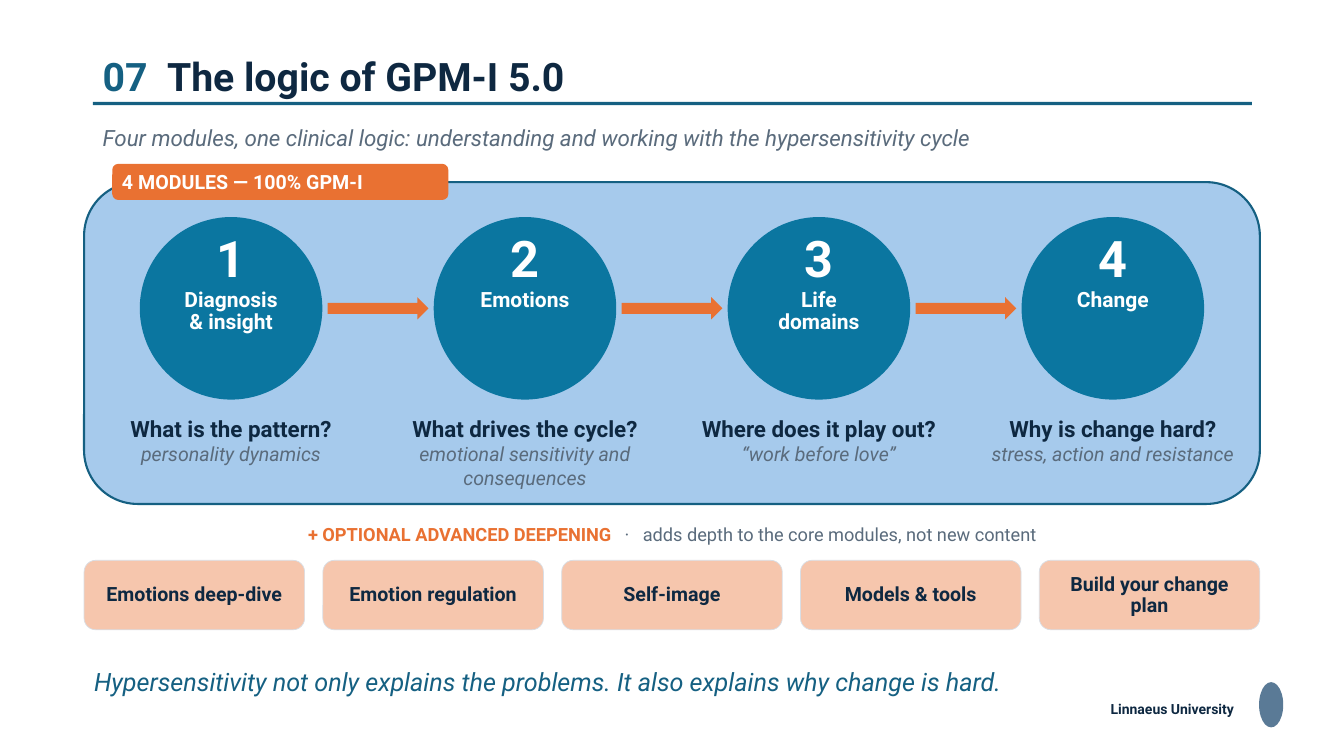
from pptx import Presentation
from pptx.dml.color import RGBColor
from pptx.enum.shapes import MSO_SHAPE as Shape
from pptx.enum.text import MSO_ANCHOR as Anchor, PP_ALIGN as Align
from pptx.util import Cm, Pt

FONT = "Roboto"
NAVY, TEAL, GREY, ORANGE = "0E2841", "156082", "5A6B7C", "E97132"
BLUE, PALE_BLUE, PEACH, WHITE = "0B76A0", "A6CAEC", "F6C6AD", "FFFFFF"
SLATE, SILVER = "5A7A96", "D9DEE5"

MODULES = [
    ("Diagnosis & insight", "What is the pattern?", "personality dynamics"),
    ("Emotions", "What drives the cycle?", "emotional sensitivity and consequences"),
    ("Life domains", "Where does it play out?", "“work before love”"),
    ("Change", "Why is change hard?", "stress, action and resistance"),
]
DEEPENING = ["Emotions deep-dive", "Emotion regulation", "Self-image",
             "Models & tools", "Build your change plan"]


def color(value):
    return RGBColor.from_string(value)


def span(text, size, tone, gap=0, **style):
    """One stretch of text; gap is extra letter spacing in points."""
    return text, tone, gap, dict(name=FONT, size=Pt(size), **style)


def write(box, paragraphs, anchor=Anchor.TOP, side=0.25):
    """Fill a box with paragraphs, each a list of spans and a format dict."""
    frame = box.text_frame
    settings = dict(word_wrap=True, vertical_anchor=anchor,
                    margin_left=Cm(side), margin_right=Cm(side))
    for name, value in settings.items():
        setattr(frame, name, value)
    for index, (spans, layout) in enumerate(paragraphs):
        para = frame.add_paragraph() if index else frame.paragraphs[0]
        for name, value in layout.items():
            setattr(para, name, value)
        for text, tone, gap, style in spans:
            run = para.add_run()
            run.text = text
            for name, value in style.items():
                setattr(run.font, name, value)
            run.font.color.rgb = color(tone)
            if gap:
                run.font._element.set("spc", str(round(gap * 100)))


def add_text(page, left, top, width, height, paragraphs, **options):
    box = page.shapes.add_textbox(Cm(left), Cm(top), Cm(width), Cm(height))
    write(box, paragraphs, **options)


def add_block(page, kind, left, top, width, height, fill, line=None, weight=1):
    block = page.shapes.add_shape(kind, Cm(left), Cm(top), Cm(width), Cm(height))
    block.shadow.inherit = False
    block.fill.solid()
    block.fill.fore_color.rgb = color(fill)
    if line:
        block.line.color.rgb = color(line)
        block.line.width = Pt(weight)
    else:
        block.line.fill.background()
    return block


def add_header(page, left, top, width):
    title = [span("07", 28, TEAL, bold=True), span(" ", 28, TEAL, 6.9, bold=True),
             span("The logic of GPM-I 5.0", 28, NAVY, bold=True)]
    add_text(page, left, top, width, 1.27, [(title, {})], anchor=Anchor.MIDDLE)
    add_block(page, Shape.RECTANGLE, left, top + 1.3, width, 0.08, TEAL)
    subtitle = ("Four modules, one clinical logic: understanding and working "
                "with the hypersensitivity cycle")
    add_text(page, left, top + 1.73, width, 0.79,
             [([span(subtitle, 16, GREY, italic=True)], {})])


def add_modules(page, left, top, width, height):
    add_block(page, Shape.ROUNDED_RECTANGLE, left, top, width, height,
              PALE_BLUE, TEAL, 1.5)
    # Tag on the upper edge
    tag = add_block(page, Shape.ROUNDED_RECTANGLE, left + 0.71, top - 0.46,
                    8.47, 0.91, ORANGE)
    write(tag, [([span("4 MODULES — 100% GPM-I", 14, WHITE, bold=True)],
                 dict(alignment=Align.LEFT))], anchor=Anchor.MIDDLE, side=0.2)
    # Circles, arrows and questions in equal columns
    column, diameter, arrow = width / len(MODULES), 4.6, 2.54
    circle_top = top + 0.88
    for index, (label, question, theme) in enumerate(MODULES):
        center = left + (index + 0.5) * column
        circle = add_block(page, Shape.OVAL, center - diameter / 2, circle_top,
                           diameter, diameter, BLUE)
        write(circle, [
            ([span(str(index + 1), 36, WHITE, bold=True)],
             dict(alignment=Align.CENTER, line_spacing=Pt(28), space_after=Pt(1))),
            ([span(label, 15, WHITE, bold=True)],
             dict(alignment=Align.CENTER, line_spacing=Pt(16))),
        ], side=0.3)
        if index < len(MODULES) - 1:
            add_block(page, Shape.RIGHT_ARROW, center + (column - arrow) / 2,
                      circle_top + (diameter - 0.56) / 2, arrow, 0.56, ORANGE)
        add_text(page, center - 3.35, top + 5.74, 6.7, 1.42, [
            ([span(question, 16, NAVY, bold=True)], dict(alignment=Align.CENTER)),
            ([span(theme, 14, GREY, italic=True)],
             dict(alignment=Align.CENTER, space_before=Pt(0.2))),
        ], side=0.2)


def add_deepening(page, left, top, width):
    centered = dict(alignment=Align.CENTER, line_spacing=Pt(15))
    caption = [span("+ OPTIONAL ADVANCED DEEPENING", 13, ORANGE, bold=True),
               span(" ·", 13, GREY, 6.4),
               span(" adds depth to the core modules, not new content", 13, GREY)]
    add_text(page, left, top, width, 0.71, [(caption, centered)])
    # Row of optional modules
    gap = 0.46
    chip_width = (width - gap * (len(DEEPENING) - 1)) / len(DEEPENING)
    for index, name in enumerate(DEEPENING):
        chip = add_block(page, Shape.ROUNDED_RECTANGLE,
                         left + index * (chip_width + gap), top + 1.04,
                         chip_width, 1.75, PEACH, SILVER, 0.5)
        write(chip, [([span(name, 14, NAVY, bold=True)], centered)],
              anchor=Anchor.MIDDLE)


def add_footer(page, left, top, width):
    closing = ("Hypersensitivity not only explains the problems. "
               "It also explains why change is hard.")
    add_text(page, left, top, width, 0.64,
             [([span(closing, 18, TEAL, italic=True)], {})])
    add_text(page, left + 25.62, top + 0.92, 3.96, 0.56,
             [([span("Linnaeus University", 10, NAVY, bold=True)], {})],
             anchor=Anchor.MIDDLE)
    # Plain emblem
    add_block(page, Shape.OVAL, left + 29.61, top + 0.53, 0.61, 1.14, SLATE)


def main():
    deck = Presentation()
    deck.slide_width, deck.slide_height = Cm(33.87), Cm(19.05)
    page = deck.slides.add_slide(deck.slide_layouts[6])
    add_header(page, 2.34, 1.27, 29.21)
    add_modules(page, 2.12, 4.59, 29.63, 8.11)
    add_deepening(page, 2.12, 13.08, 29.63)
    add_footer(page, 2.12, 16.66, 29.63)
    deck.save("out.pptx")


if __name__ == "__main__":
    main()
